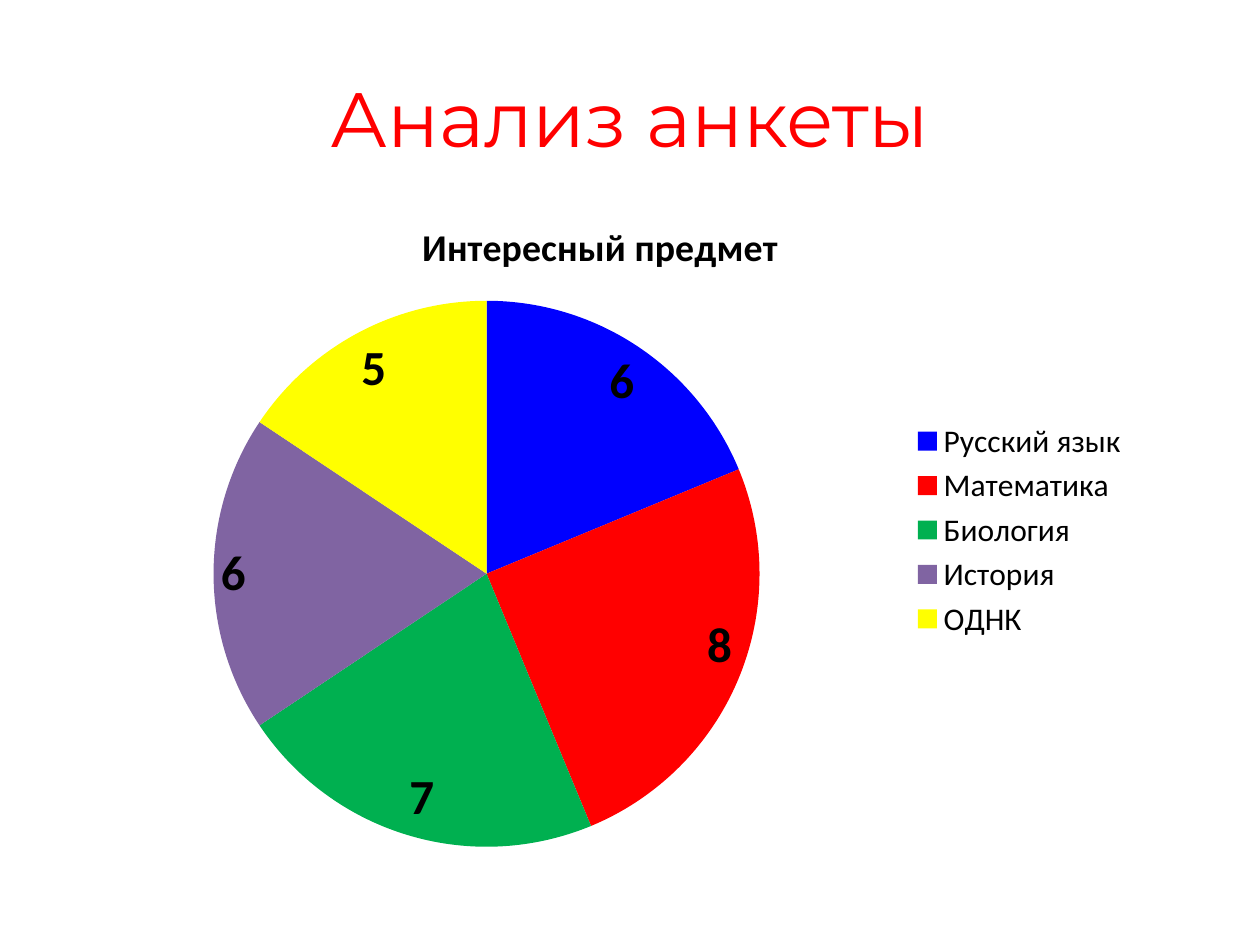
import pptx
import pptx.chart.data
import pptx.dml.color
import pptx.enum.chart
import pptx.enum.text
import pptx.oxml
import pptx.oxml.ns
import pptx.util
from pptx.util import Cm

SUBJECTS = [
    ("Русский язык", 6, "0000FF"),
    ("Математика", 8, "FF0000"),
    ("Биология", 7, "00B050"),
    ("История", 6, "8064A2"),
    ("ОДНК", 5, "FFFF00"),
]
QUESTION = "Интересный предмет"


def rgb(hex_colour):
    return pptx.dml.color.RGBColor.from_string(hex_colour)


def style_font(font, name, size, colour, bold=False):
    font.name = name
    font.size = pptx.util.Pt(size)
    font.bold = bold
    font.color.rgb = rgb(colour)


def add_heading(slide, text):
    heading = slide.shapes.add_textbox(Cm(1.27), Cm(0.76), Cm(22.86), Cm(3.18))
    frame = heading.text_frame
    frame.word_wrap = True
    frame.vertical_anchor = pptx.enum.text.MSO_ANCHOR.MIDDLE
    frame.text = text
    paragraph = frame.paragraphs[0]
    paragraph.alignment = pptx.enum.text.PP_ALIGN.CENTER
    style_font(paragraph.runs[0].font, "Montserrat", 44, "FF0000")


def place_plot(chart, x, y, width, height):
    """Fix the pie's box, given as fractions of the chart area."""
    plot_area = chart.plots[0]._element.getparent()
    for old_layout in plot_area.findall(pptx.oxml.ns.qn("c:layout")):
        plot_area.remove(old_layout)
    settings = [("layoutTarget", "inner"), ("xMode", "edge"), ("yMode", "edge"),
                ("x", x), ("y", y), ("w", width), ("h", height)]
    entries = "".join(f'<c:{tag} val="{value}"/>' for tag, value in settings)
    plot_area.insert(0, pptx.oxml.parse_xml(
        f'<c:layout {pptx.oxml.ns.nsdecls("c")}>'
        f"<c:manualLayout>{entries}</c:manualLayout></c:layout>"))


def add_subject_pie(slide):
    answers = pptx.chart.data.CategoryChartData()
    answers.categories = [subject for subject, _, _ in SUBJECTS]
    answers.add_series(QUESTION, [votes for _, votes, _ in SUBJECTS])
    chart = slide.shapes.add_chart(
        pptx.enum.chart.XL_CHART_TYPE.PIE,
        Cm(1.19), Cm(3.89), Cm(21.82), Cm(13.59), answers).chart
    style_font(chart.font, "Calibri", 18, "000000")

    chart.has_title = True
    title = chart.chart_title
    title.include_in_layout = False
    title.text_frame.text = QUESTION
    style_font(title.text_frame.paragraphs[0].runs[0].font,
               "Calibri", 21.6, "000000", bold=True)

    chart.has_legend = True
    chart.legend.position = pptx.enum.chart.XL_LEGEND_POSITION.RIGHT
    chart.legend.include_in_layout = False

    pie = chart.plots[0]
    pie.vary_by_categories = True
    for index, (_, _, colour) in enumerate(SUBJECTS):
        fill = pie.series[0].points[index].format.fill
        fill.solid()
        fill.fore_color.rgb = rgb(colour)

    labels = pie.series[0].data_labels
    labels.show_value = True
    labels.show_percentage = False
    labels.position = pptx.enum.chart.XL_LABEL_POSITION.INSIDE_END
    style_font(labels.font, "Calibri", 28, "000000", bold=True)
    place_plot(chart, 0.14, 0.16, 0.51, 0.81)


def main():
    presentation = pptx.Presentation()
    presentation.slide_width = Cm(25.4)
    presentation.slide_height = Cm(19.05)
    slide = presentation.slides.add_slide(presentation.slide_layouts[6])
    add_heading(slide, "Анализ анкеты")
    add_subject_pie(slide)
    presentation.save("out.pptx")


if __name__ == "__main__":
    main()
